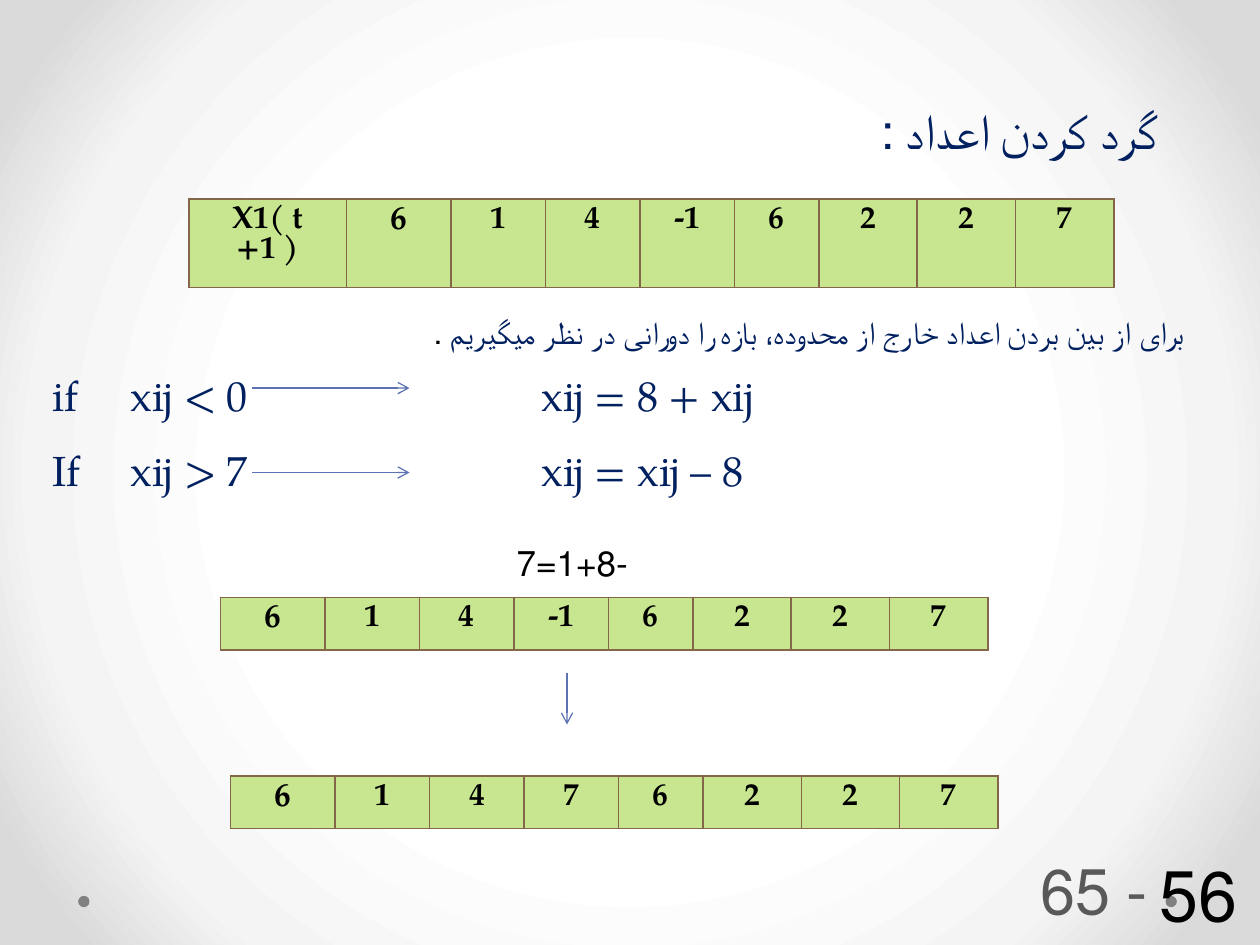
from lxml import etree
from pptx import Presentation
from pptx.dml.color import RGBColor
from pptx.enum.shapes import MSO_CONNECTOR as Connector, MSO_SHAPE as Shape
from pptx.enum.text import MSO_ANCHOR as Anchor, PP_ALIGN as Align
from pptx.oxml import parse_xml
from pptx.oxml.ns import nsdecls, qn
from pptx.util import Inches, Pt

COLORS = {
    "navy": "002060", "black": "000000", "slate": "595959", "dot": "808080",
    "arrow": "5C72B2", "cell": "C7E68F", "border": "846648",
}
BACKDROP = [(50, "FFFFFF"), (76, "F4F4F4"), (92, "DADADA")]
SERIF = "TeX Gyre Pagella"
SANS = "TeX Gyre Adventor"


def rgb(name):
    return RGBColor.from_string(COLORS[name])


class SlideBuilder:
    def __init__(self, page):
        self.page = page

    def backdrop(self, stops):
        marks = "".join(
            f'<a:gs pos="{place * 1000}"><a:srgbClr val="{color}"/></a:gs>'
            for place, color in stops)
        background = parse_xml(
            f'<p:bg {nsdecls("p", "a")}><p:bgPr><a:gradFill><a:gsLst>{marks}</a:gsLst>'
            '<a:path path="circle"><a:fillToRect l="50000" t="50000" r="50000" b="50000"/>'
            '</a:path></a:gradFill><a:effectLst/></p:bgPr></p:bg>')
        self.page._element.find(qn("p:cSld")).insert(0, background)

    def dot(self, left, top, size):
        shape = self.page.shapes.add_shape(
            Shape.OVAL, Inches(left), Inches(top), Inches(size), Inches(size))
        shape.shadow.inherit = False
        shape.fill.solid()
        shape.fill.fore_color.rgb = rgb("dot")
        shape.line.fill.background()

    def span(self, para, text, size, color, font=SERIF, bold=False):
        span = para.add_run()
        span.text = text
        span.font.size = Pt(size)
        span.font.name = font
        span.font.bold = bold
        span.font.color.rgb = rgb(color)

    def box(self, left, top, width, height, anchor=Anchor.TOP):
        frame = self.page.shapes.add_textbox(
            Inches(left), Inches(top), Inches(width), Inches(height)).text_frame
        frame.word_wrap = True
        frame.vertical_anchor = anchor
        return frame

    def rtl_text(self, place, spans, size, font=SERIF, anchor=Anchor.TOP, align=Align.RIGHT):
        frame = self.box(*place, anchor)
        para = frame.paragraphs[0]
        para.alignment = align
        para._p.get_or_add_pPr().set("rtl", "1")
        for text, color in spans:
            self.span(para, text, size, color, font)
        return frame

    def rules(self, place, lines, stops):
        frame = self.box(*place)
        for index, parts in enumerate(lines):
            para = frame.add_paragraph() if index else frame.paragraphs[0]
            para.line_spacing = 1.5
            tabs = etree.SubElement(para._p.get_or_add_pPr(), qn("a:tabLst"))
            for stop in stops:
                etree.SubElement(tabs, qn("a:tab"), pos=str(Inches(stop)), algn="l")
            self.span(para, "\t".join(parts), 24, "navy")

    def arrow(self, start, end):
        line = self.page.shapes.add_connector(
            Connector.STRAIGHT, *map(Inches, (*start, *end)))
        line.line.color.rgb = rgb("arrow")
        line.line.width = Pt(0.75)
        etree.SubElement(line.line._get_or_add_ln(), qn("a:tailEnd"), type="arrow")
        etree.SubElement(line._element.spPr, qn("a:effectLst"))

    def cell_style(self, cell):
        properties = cell._tc.get_or_add_tcPr()
        for side in ("lnL", "lnR", "lnT", "lnB"):
            properties.append(parse_xml(
                f'<a:{side} {nsdecls("a")} w="{Pt(1)}"><a:solidFill>'
                f'<a:srgbClr val="{COLORS["border"]}"/></a:solidFill></a:{side}>'))
        cell.fill.solid()
        cell.fill.fore_color.rgb = rgb("cell")

    def number_row(self, left, top, numbers, label=None):
        widths = [0.83, 0.75, 0.75, 0.75, 0.67, 0.78, 0.78, 0.78]
        entries = [(text, 18 if index else 19) for index, text in enumerate(numbers)]
        if label:
            widths.insert(0, 1.25)
            entries.insert(0, (label, 18))
        table = self.page.shapes.add_table(
            1, len(widths), Inches(left), Inches(top),
            Inches(sum(widths)), Inches(0.41)).table
        table.first_row = table.horz_banding = False
        for index, (width, (text, size)) in enumerate(zip(widths, entries)):
            table.columns[index].width = Inches(width)
            cell = table.cell(0, index)
            self.cell_style(cell)
            para = cell.text_frame.paragraphs[0]
            para.alignment = Align.CENTER
            self.span(para, text, size, "black", bold=True)


def main():
    deck = Presentation()
    deck.slide_width, deck.slide_height = Inches(10), Inches(7.5)
    builder = SlideBuilder(deck.slides.add_slide(deck.slide_layouts[6]))
    builder.backdrop(BACKDROP)
    for left in (9.25, 0.62):
        builder.dot(left, 7.11, 0.09)

    builder.rules(
        (0.32, 2.68, 6.1, 1.31),
        [("if", "xij < 0", "xij = 8 + xij"), ("If", "xij > 7", "xij = xij – 8")],
        (0.62, 3.88))
    builder.rtl_text(
        (0.58, 2.13, 8.92, 1.01),
        [("برای از بین بردن اعداد خارج از محدوده، بازه را دورانی در نظر میگیریم ", "navy"),
         (".", "black")],
        18, anchor=Anchor.MIDDLE)
    for height in (3.08, 3.75):
        builder.arrow((2, height), (3.25, height))

    builder.number_row(1.5, 1.58, ["6", "1", "4", "-1", "6", "2", "2", "7"], "X1( t +1 )")
    builder.rtl_text((6.35, 0.75, 2.94, 0.57), [("گرد کردن اعداد :", "navy")], 28)
    builder.number_row(1.75, 4.74, ["6", "1", "4", "-1", "6", "2", "2", "7"])
    builder.arrow((4.5, 5.34), (4.5, 5.75))
    builder.number_row(1.83, 6.16, ["6", "1", "4", "7", "6", "2", "2", "7"])
    builder.rtl_text((4, 4.25, 1.08, 0.43), [("-1+8=7", "black")], 20)

    page_number = builder.rtl_text(
        (9.17, 6.83, 0.79, 0.52), [("56", "black")], 40, SANS, Anchor.MIDDLE, Align.LEFT)
    page_number.margin_left = Inches(0.03)
    page_number.margin_right = Inches(0.05)
    builder.rtl_text((7, 6.71, 2.33, 0.71), [(" - 65", "slate")], 36, SANS)
    deck.save("out.pptx")


if __name__ == "__main__":
    main()
